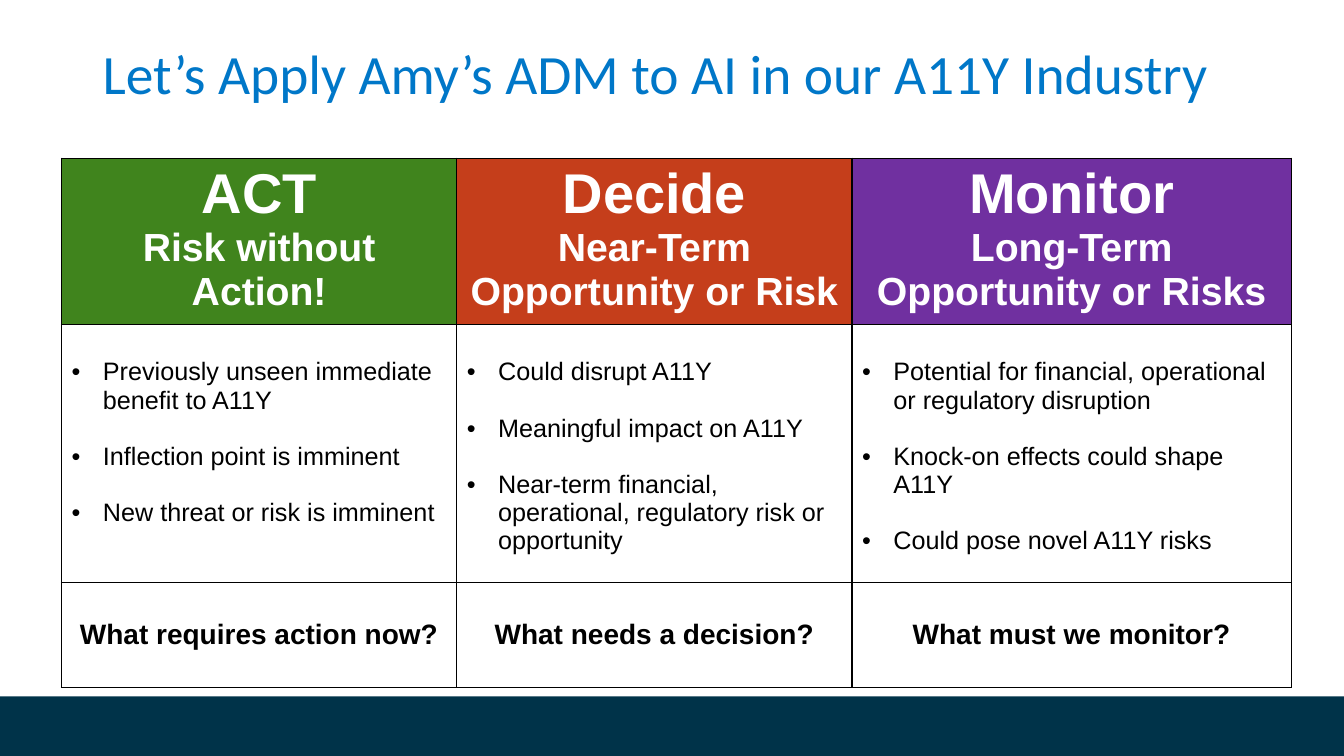
from dataclasses import dataclass

from lxml.etree import SubElement
from pptx import Presentation
from pptx.dml.color import RGBColor
from pptx.enum.shapes import MSO_SHAPE as Shape
from pptx.enum.text import MSO_ANCHOR as Anchor, MSO_AUTO_SIZE as AutoSize, PP_ALIGN as Align
from pptx.oxml import parse_xml
from pptx.oxml.ns import nsdecls, qn
from pptx.util import Cm, Pt

BLACK = RGBColor(0x00, 0x00, 0x00)
WHITE = RGBColor(0xFF, 0xFF, 0xFF)
NAVY = RGBColor(0x00, 0x33, 0x49)
BLUE = RGBColor(0x00, 0x77, 0xC8)
GREEN = RGBColor(0x40, 0x84, 0x1D)
RED = RGBColor(0xC5, 0x3E, 0x1B)
PURPLE = RGBColor(0x70, 0x30, 0xA0)

SLIDE_WIDTH, SLIDE_HEIGHT = Cm(33.87), Cm(19.05)
BAR_HEIGHT = Cm(1.5)
ROW_HEIGHTS = (Cm(4.18), Cm(6.5), Cm(2.65))
BULLET_INDENT = Cm(0.79)


@dataclass(frozen=True)
class Stage:
    name: str
    horizon: str
    criteria: tuple[str, ...]
    question: str
    color: RGBColor
    width: int


STAGES = (
    Stage("ACT", "Risk without Action!",
          ("Previously unseen immediate benefit to A11Y",
           "Inflection point is imminent",
           "New threat or risk is imminent"),
          "What requires action now?", GREEN, Cm(9.96)),
    Stage("Decide", "Near-Term Opportunity or Risk",
          ("Could disrupt A11Y",
           "Meaningful impact on A11Y",
           "Near-term financial, operational, regulatory risk or opportunity"),
          "What needs a decision?", RED, Cm(9.96)),
    Stage("Monitor", "Long-Term Opportunity or Risks",
          ("Potential for financial, operational or regulatory disruption",
           "Knock-on effects could shape A11Y",
           "Could pose novel A11Y risks"),
          "What must we monitor?", PURPLE, Cm(11.07)),
)


def format_runs(para, size: float, color: RGBColor, bold: bool, font: str = "Arial") -> None:
    for span in para.runs:
        span.font.name = font
        span.font.size = Pt(size)
        span.font.bold = bold
        span.font.color.rgb = color


def add_bullet(para) -> None:
    properties = para._p.get_or_add_pPr()
    properties.set("marL", str(BULLET_INDENT))
    properties.set("indent", str(-BULLET_INDENT))
    SubElement(properties, qn("a:buFont")).set("typeface", "Arial")
    SubElement(properties, qn("a:buChar")).set("char", "•")


def style_cell(cell, fill: RGBColor) -> None:
    """Fill a cell and give it a thin black border on every side."""
    cell.fill.solid()
    cell.fill.fore_color.rgb = fill
    properties = cell._tc.get_or_add_tcPr()
    for index, side in enumerate("LRTB"):
        properties.insert(index, parse_xml(
            f'<a:ln{side} {nsdecls("a")} w="{Pt(1)}"><a:solidFill>'
            f'<a:srgbClr val="{BLACK}"/></a:solidFill></a:ln{side}>'))


def fill_header(cell, stage: Stage) -> None:
    style_cell(cell, stage.color)
    cell.text_frame.text = f"{stage.name}\n{stage.horizon}"
    for para, size in zip(cell.text_frame.paragraphs, (40, 28)):
        para.alignment = Align.CENTER
        format_runs(para, size, WHITE, True)


def fill_criteria(cell, stage: Stage) -> None:
    style_cell(cell, WHITE)
    cell.margin_top = Cm(0.85)
    cell.text_frame.text = "\n".join(stage.criteria)
    for index, para in enumerate(cell.text_frame.paragraphs):
        add_bullet(para)
        if index:
            para.space_before = Pt(20)
        format_runs(para, 18, BLACK, False)


def fill_question(cell, stage: Stage) -> None:
    style_cell(cell, WHITE)
    cell.vertical_anchor = Anchor.MIDDLE
    cell.text_frame.text = stage.question
    para = cell.text_frame.paragraphs[0]
    para.alignment = Align.CENTER
    format_runs(para, 20, BLACK, True)


def add_bar(page) -> None:
    bar = page.shapes.add_shape(Shape.RECTANGLE, 0, SLIDE_HEIGHT - BAR_HEIGHT,
                                SLIDE_WIDTH, BAR_HEIGHT)
    bar.shadow.inherit = False
    bar.fill.solid()
    bar.fill.fore_color.rgb = NAVY
    bar.line.fill.background()


def set_title(page, text: str) -> None:
    title = page.shapes.title
    title.left, title.top, title.width, title.height = Cm(2.33), Cm(0.53), Cm(29.21), Cm(2.8)
    frame = title.text_frame
    frame.text = text
    frame.word_wrap = True
    frame.auto_size = AutoSize.NONE
    frame.vertical_anchor = Anchor.MIDDLE
    para = frame.paragraphs[0]
    para.alignment = Align.LEFT
    para.line_spacing = 0.9
    format_runs(para, 39.6, BLUE, False, "Calibri")


def add_stage_table(page) -> None:
    table = page.shapes.add_table(len(ROW_HEIGHTS), len(STAGES), Cm(1.55), Cm(3.99),
                                  sum(stage.width for stage in STAGES),
                                  sum(ROW_HEIGHTS)).table
    table.first_row = table.horz_banding = False
    for row, height in zip(table.rows, ROW_HEIGHTS):
        row.height = height
    for column, stage in enumerate(STAGES):
        table.columns[column].width = stage.width
        for row, fill_cell in enumerate((fill_header, fill_criteria, fill_question)):
            fill_cell(table.cell(row, column), stage)


def main() -> None:
    deck = Presentation()
    deck.slide_width, deck.slide_height = SLIDE_WIDTH, SLIDE_HEIGHT
    page = deck.slides.add_slide(deck.slide_layouts.get_by_name("Title Only"))
    add_bar(page)
    set_title(page, "Let’s Apply Amy’s ADM to AI in our A11Y Industry")
    add_stage_table(page)
    deck.save("out.pptx")


if __name__ == "__main__":
    main()
